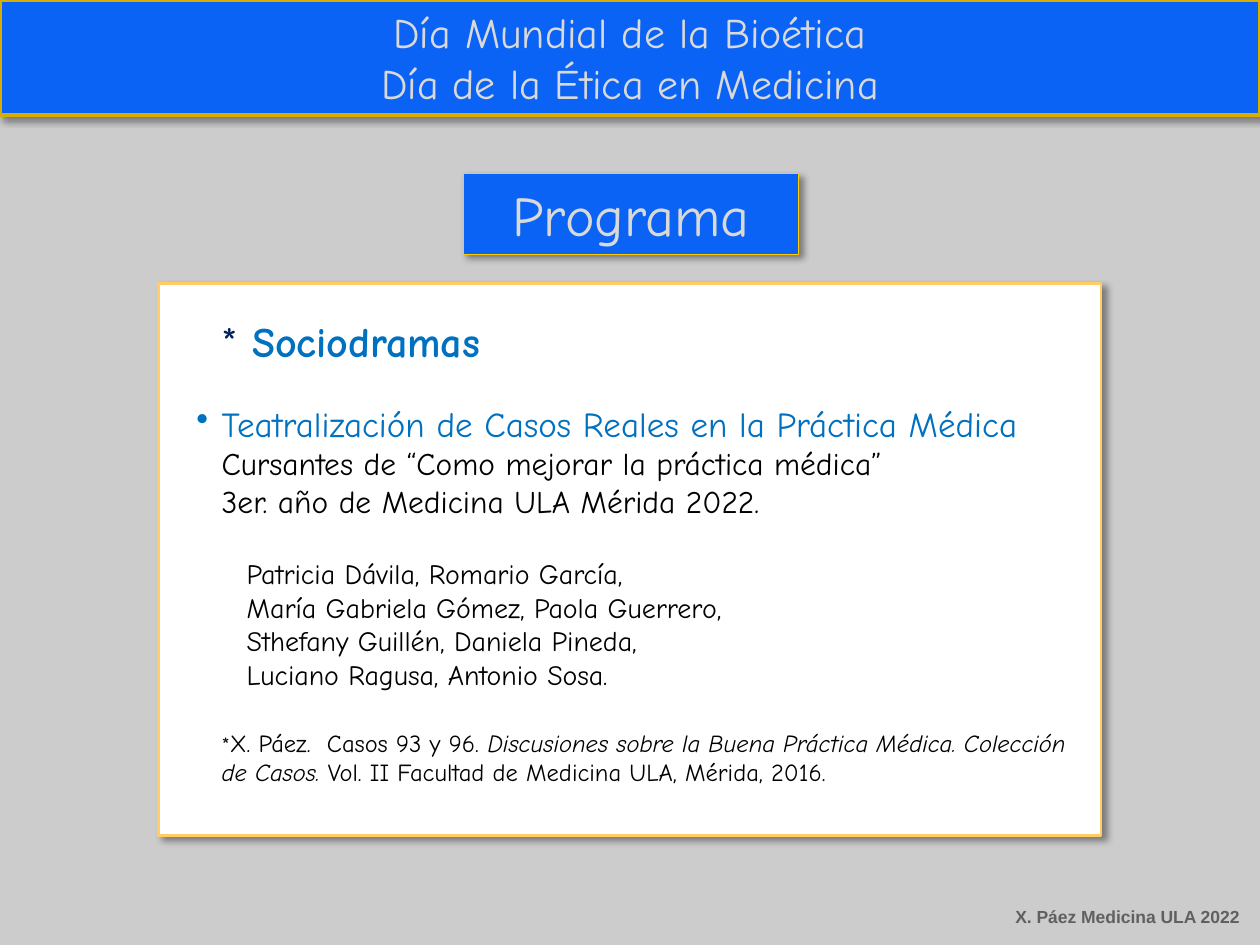
"""Build the programme slide for the World Bioethics Day sociodramas."""
from dataclasses import dataclass

from lxml import etree
from pptx import Presentation
from pptx.dml.color import RGBColor
from pptx.enum.shapes import MSO_SHAPE
from pptx.enum.text import MSO_ANCHOR, PP_ALIGN
from pptx.oxml.ns import qn
from pptx.util import Inches, Pt

RECTANGLE = MSO_SHAPE.RECTANGLE
TOP, MIDDLE = MSO_ANCHOR.TOP, MSO_ANCHOR.MIDDLE
LEFT, CENTER = PP_ALIGN.LEFT, PP_ALIGN.CENTER

COLUMNS, ROWS = 100, 75
BLANK_LAYOUT = 6
SECTION_GAP = 21
BODY_FONT, FOOTER_FONT = "Comic Neue", "Arial"
COLORS = {
    "background": "CCCCCC",
    "banner": "0A63F4",
    "banner_line": "D6AD00",
    "label_line": "FFCC00",
    "panel": "FFFFFF",
    "panel_line": "FFCC66",
    "banner_text": "D9D9D9",
    "star": "002060",
    "heading": "0070C0",
    "body": "000000",
    "footer": "606060",
    "shadow": "000000",
}


@dataclass(frozen=True)
class Area:
    column: float
    row: float
    columns: float
    rows: float


@dataclass(frozen=True)
class Span:
    text: str
    size: float
    color: str = "body"
    bold: bool = False
    italic: bool = False
    font: str = BODY_FONT


@dataclass(frozen=True)
class Line:
    spans: tuple[Span, ...]
    indent: float = 0
    bullet: str = ""
    before: float = 0
    align: PP_ALIGN = LEFT


@dataclass(frozen=True)
class Card:
    area: Area
    fill: str
    outline: str
    weight: float
    lines: tuple[Line, ...]
    anchor: MSO_ANCHOR = MIDDLE
    inset: float = 0.05


def banner_line(text: str, size: float) -> Line:
    """Return one centred line of banner text."""
    return Line((Span(text, size, "banner_text"),), align=CENTER)


def body_lines(texts: list[str], size: float, indent: float, gap: float = 0) -> tuple[Line, ...]:
    """Return plain lines, with the gap above the first one."""
    return tuple(
        Line((Span(text, size),), indent, before=0 if index else gap)
        for index, text in enumerate(texts)
    )


PANEL_LINES = (
    Line((Span("* ", 24, "star"), Span("Sociodramas", 24, "heading", bold=True)), 0.4),
    Line(
        (Span("Teatralización de Casos Reales en la Práctica Médica", 20, "heading"),),
        0.4, "•", SECTION_GAP,
    ),
    *body_lines(
        ["Cursantes de “Como mejorar la práctica médica”", "3er. año de Medicina ULA Mérida 2022."],
        18, 0.4,
    ),
    *body_lines(
        [
            "Patricia Dávila, Romario García,",
            "María Gabriela Gómez, Paola Guerrero,",
            "Sthefany Guillén, Daniela Pineda,",
            "Luciano Ragusa, Antonio Sosa.",
        ],
        16, 0.6, SECTION_GAP,
    ),
    Line(
        (
            Span("*", 12),
            Span("X. Páez.  Casos 93 y 96. ", 14),
            Span("Discusiones sobre la Buena Práctica Médica. Colección de Casos. ", 14, italic=True),
            Span("Vol. II Facultad de Medicina ULA, Mérida, 2016.", 14),
        ),
        0.4, before=SECTION_GAP,
    ),
)
CARDS = (
    Card(Area(12.6, 22.5, 74.8, 43.8), "panel", "panel_line", 1.5, PANEL_LINES, TOP, 0.25),
    Card(
        Area(0, 0, COLUMNS, 9.1), "banner", "banner_line", 2.25,
        (banner_line("Día Mundial de la Bioética", 24), banner_line("Día de la Ética en Medicina", 24)),
    ),
    Card(Area(36.8, 13.8, 26.6, 6.4), "banner", "label_line", 0.75, (banner_line("Programa", 32),)),
)
FOOTER_AREA = Area(79.6, 71.4, 20, 2.7)
FOOTER = Line((Span("X. Páez Medicina ULA 2022", 10, "footer", bold=True, font=FOOTER_FONT),))


def rgb(name: str) -> RGBColor:
    """Look up a named colour."""
    return RGBColor.from_string(COLORS[name])


def place(deck, area: Area) -> tuple[int, int, int, int]:
    """Turn grid units into slide lengths."""
    across, down = deck.slide_width / COLUMNS, deck.slide_height / ROWS
    return (
        round(area.column * across), round(area.row * down),
        round(area.columns * across), round(area.rows * down),
    )


def write_lines(frame, lines: tuple[Line, ...]) -> None:
    """Fill a text frame with formatted lines."""
    for index, line in enumerate(lines):
        para = frame.add_paragraph() if index else frame.paragraphs[0]
        para.alignment = line.align
        para.space_before = Pt(line.before)
        properties = para._p.get_or_add_pPr()
        properties.set("marL", str(Inches(line.indent)))
        properties.set("indent", str(Inches(-0.2 if line.bullet else 0)))
        if line.bullet:
            etree.SubElement(properties, qn("a:buChar"), char=line.bullet)
        for span in line.spans:
            run = para.add_run()
            run.text = span.text
            run.font.name = span.font
            run.font.size = Pt(span.size)
            run.font.bold = span.bold
            run.font.italic = span.italic
            run.font.color.rgb = rgb(span.color)


def add_shadow(shape) -> None:
    """Cast a soft shadow to the lower right."""
    shape.shadow.inherit = False
    effects = shape._element.spPr.find(qn("a:effectLst"))
    shadow = etree.SubElement(
        effects, qn("a:outerShdw"), blurRad=str(Pt(4)), dist=str(Pt(3)),
        dir=str(45 * 60000), algn="tl", rotWithShape="0",
    )
    color = etree.SubElement(shadow, qn("a:srgbClr"), val=COLORS["shadow"])
    etree.SubElement(color, qn("a:alpha"), val="40000")


def draw_card(deck, page, card: Card) -> None:
    """Draw a filled, outlined rectangle with its text."""
    box = page.shapes.add_shape(RECTANGLE, *place(deck, card.area))
    box.fill.solid()
    box.fill.fore_color.rgb = rgb(card.fill)
    box.line.color.rgb = rgb(card.outline)
    box.line.width = Pt(card.weight)
    add_shadow(box)
    frame = box.text_frame
    frame.word_wrap = True
    frame.vertical_anchor = card.anchor
    frame.margin_top = Inches(card.inset)
    write_lines(frame, card.lines)


def main() -> None:
    """Build and save the deck."""
    deck = Presentation()
    deck.slide_width, deck.slide_height = Inches(10), Inches(7.5)
    page = deck.slides.add_slide(deck.slide_layouts[BLANK_LAYOUT])
    page.background.fill.solid()
    page.background.fill.fore_color.rgb = rgb("background")
    for card in CARDS:
        draw_card(deck, page, card)
    footer = page.shapes.add_textbox(*place(deck, FOOTER_AREA))
    footer.text_frame.word_wrap = False
    write_lines(footer.text_frame, (FOOTER,))
    deck.save("out.pptx")


if __name__ == "__main__":
    main()
